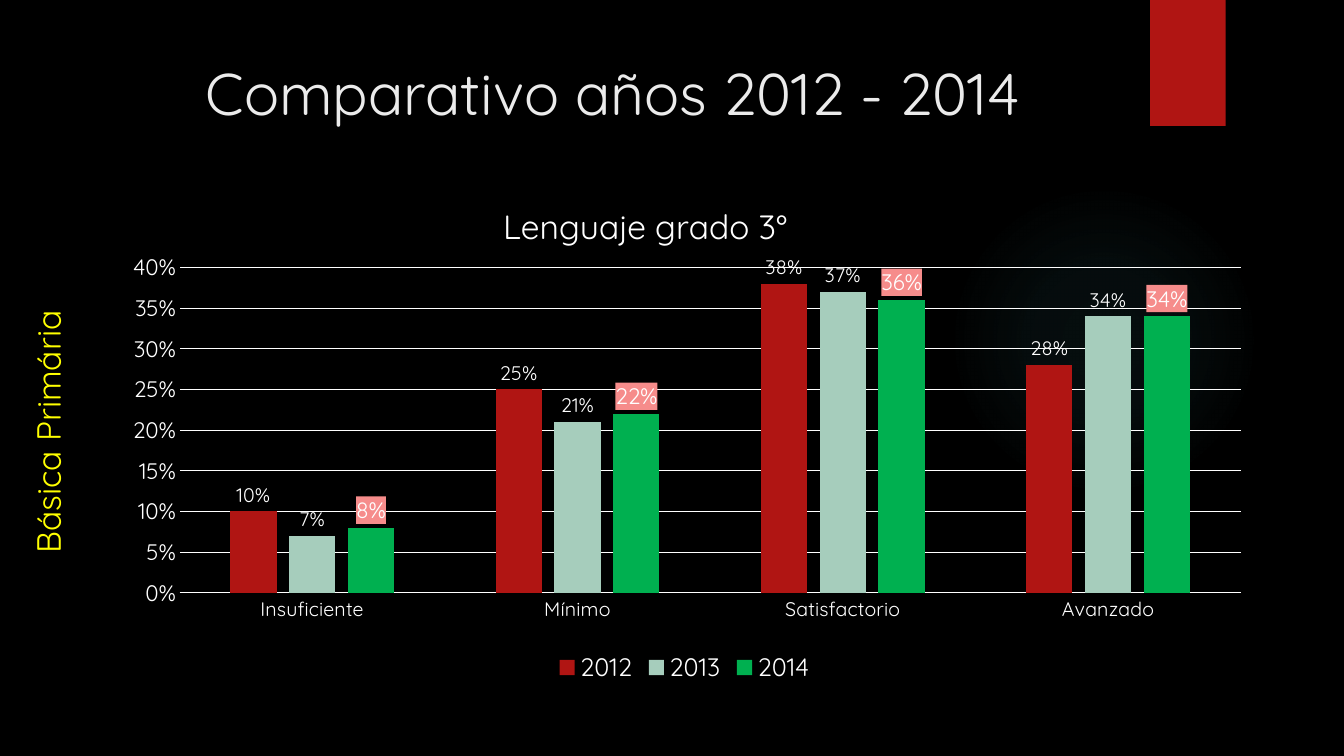
import pptx
import pptx.chart.data
import pptx.dml.color
import pptx.enum.chart
import pptx.enum.shapes
import pptx.enum.text
import pptx.oxml
import pptx.oxml.ns
import pptx.util

Pt = pptx.util.Pt
COLOURS = {
    "background": "000000",
    "glow": "50B9C1",
    "ribbon": "B01513",
    "title": "EBEBEB",
    "text": "FFFFFF",
    "level": "FFFF00",
    "highlight": "F68C8B",
}
LEVELS = ["Insuficiente", "Mínimo", "Satisfactorio", "Avanzado"]
YEARS = [
    ("2012", [0.10, 0.25, 0.38, 0.28], "B01513", 14, None),
    ("2013", [0.07, 0.21, 0.37, 0.34], "A6CDBC", 14, None),
    ("2014", [0.08, 0.22, 0.36, 0.34], "00B050", 16, COLOURS["highlight"]),
]
GLOW_STOPS = [(0, 7), (36, 6), (69, 0)]


class SlideBuilder:
    """Holds the style and the slide being built."""

    def __init__(self, presentation, font="Quicksand"):
        self.font = font
        self.slide = presentation.slides.add_slide(presentation.slide_layouts[5])
        self.paint(self.slide.background.fill, COLOURS["background"])

    def paint(self, fill, colour):
        fill.solid()
        fill.fore_color.rgb = pptx.dml.color.RGBColor.from_string(colour)

    def style(self, font, size, colour=COLOURS["text"]):
        font.name = self.font
        font.size = Pt(size)
        font.bold = False
        font.color.rgb = pptx.dml.color.RGBColor.from_string(colour)

    def xml(self, body):
        return pptx.oxml.parse_xml(body.replace(">", f" {pptx.oxml.ns.nsdecls('a', 'c')}>", 1))

    def shape(self, kind, left, top, width, height, colour):
        shape = self.slide.shapes.add_shape(kind, Pt(left), Pt(top), Pt(width), Pt(height))
        shape.shadow.inherit = False
        shape.line.fill.background()
        self.paint(shape.fill, colour)
        return shape

    def glow(self, left, top, size, colour):
        halo = self.shape(pptx.enum.shapes.MSO_SHAPE.OVAL, left, top, size, size, colour)
        stops = "".join(
            f'<a:gs pos="{place * 1000}"><a:srgbClr val="{colour}">'
            f'<a:alpha val="{alpha * 1000}"/></a:srgbClr></a:gs>'
            for place, alpha in GLOW_STOPS
        )
        gradient = self.xml(
            f'<a:gradFill><a:gsLst>{stops}</a:gsLst><a:path path="circle">'
            '<a:fillToRect l="50000" t="50000" r="50000" b="50000"/></a:path></a:gradFill>'
        )
        properties = halo._element.spPr
        properties.replace(properties.find(pptx.oxml.ns.qn("a:solidFill")), gradient)

    def title(self, text, left, top, width, height):
        title = self.slide.shapes.title
        title.left, title.top, title.width, title.height = map(Pt, (left, top, width, height))
        frame = title.text_frame
        frame.text = text
        frame.vertical_anchor = pptx.enum.text.MSO_ANCHOR.MIDDLE
        frame.paragraphs[0].alignment = pptx.enum.text.PP_ALIGN.LEFT
        self.style(frame.paragraphs[0].font, 42, COLOURS["title"])

    def side_label(self, text, left, top, width, height):
        label = self.slide.shapes.add_textbox(Pt(left), Pt(top), Pt(width), Pt(height))
        label.rotation = 270
        label.text_frame.word_wrap = True
        label.text_frame.text = text
        self.style(label.text_frame.paragraphs[0].font, 24, COLOURS["level"])

    def place(self, part, left, top, width=None, height=None):
        target = '<c:layoutTarget val="inner"/>' if width else ""
        modes = '<c:xMode val="edge"/><c:yMode val="edge"/>'
        places = {"x": left, "y": top, "w": width, "h": height}
        values = "".join(f'<c:{key} val="{value}"/>' for key, value in places.items() if value)
        layout = self.xml(
            f"<c:layout><c:manualLayout>{target}{modes}{values}</c:manualLayout></c:layout>"
        )
        for old in part.findall(pptx.oxml.ns.qn("c:layout")):
            part.remove(old)
        text = part.find(pptx.oxml.ns.qn("c:tx"))
        if text is None:
            part.insert(0, layout)
        else:
            text.addnext(layout)

    def axis_line(self, line):
        line.width = Pt(0.75)
        self.paint(line.fill, COLOURS["text"])

    def series(self, series, colour, label_size, label_fill):
        self.paint(series.format.fill, colour)
        series.invert_if_negative = False
        labels = series.data_labels
        labels.show_value = True
        labels.number_format = "0%"
        labels.number_format_is_linked = False
        labels.position = pptx.enum.chart.XL_LABEL_POSITION.OUTSIDE_END
        self.style(labels.font, label_size)
        if label_fill:
            backing = self.xml(
                f'<c:spPr><a:solidFill><a:srgbClr val="{label_fill}"/></a:solidFill></c:spPr>'
            )
            labels._element.find(pptx.oxml.ns.qn("c:txPr")).addprevious(backing)

    def column_chart(self, title, left, top, width, height):
        data = pptx.chart.data.CategoryChartData(number_format="0%")
        data.categories = LEVELS
        for year, shares, *_ in YEARS:
            data.add_series(year, shares)
        chart = self.slide.shapes.add_chart(
            pptx.enum.chart.XL_CHART_TYPE.COLUMN_CLUSTERED,
            Pt(left), Pt(top), Pt(width), Pt(height), data,
        ).chart
        self.style(chart.font, 10)

        heading = chart.chart_title
        heading.text_frame.text = title
        self.style(heading.text_frame.paragraphs[0].font, 24)
        heading.include_in_layout = False
        self.place(heading._element, 0.34, 0.07)
        self.place(chart._chartSpace.chart.plotArea, 0.069, 0.206, 0.906, 0.614)

        chart.has_legend = True
        chart.legend.position = pptx.enum.chart.XL_LEGEND_POSITION.BOTTOM
        chart.legend.include_in_layout = False
        self.style(chart.legend.font, 18)

        for axis, size in ((chart.category_axis, 14), (chart.value_axis, 16)):
            axis.major_tick_mark = pptx.enum.chart.XL_TICK_MARK.NONE
            axis.minor_tick_mark = pptx.enum.chart.XL_TICK_MARK.NONE
            self.style(axis.tick_labels.font, size)
        self.axis_line(chart.category_axis.format.line)
        shares_axis = chart.value_axis
        shares_axis.minimum_scale, shares_axis.maximum_scale = 0, 0.4
        shares_axis.major_unit = 0.05
        shares_axis.tick_labels.number_format = "0%"
        shares_axis.tick_labels.number_format_is_linked = False
        shares_axis.format.line.fill.background()
        self.axis_line(shares_axis.major_gridlines.format.line)

        plot = chart.plots[0]
        plot.gap_width, plot.overlap = 219, -27
        plot.vary_by_categories = False
        for series, (_, _, *look) in zip(plot.series, YEARS):
            self.series(series, *look)


def main():
    presentation = pptx.Presentation()
    presentation.slide_width, presentation.slide_height = Pt(960), Pt(540)
    builder = SlideBuilder(presentation)
    builder.glow(677.5, 131.8, 221.8, COLOURS["glow"])
    builder.shape(
        pptx.enum.shapes.MSO_SHAPE.RECTANGLE, 821.5, 0, 54, 90, COLOURS["ribbon"]
    )
    builder.title("Comparativo años 2012 - 2014", 139.7, 33.8, 635.8, 64)
    builder.column_chart("Lenguaje grado 3°", 70.6, 113, 836.6, 378.7)
    builder.side_label("Básica Primária", -62.6, 288, 193, 36)
    presentation.save("out.pptx")


if __name__ == "__main__":
    main()
